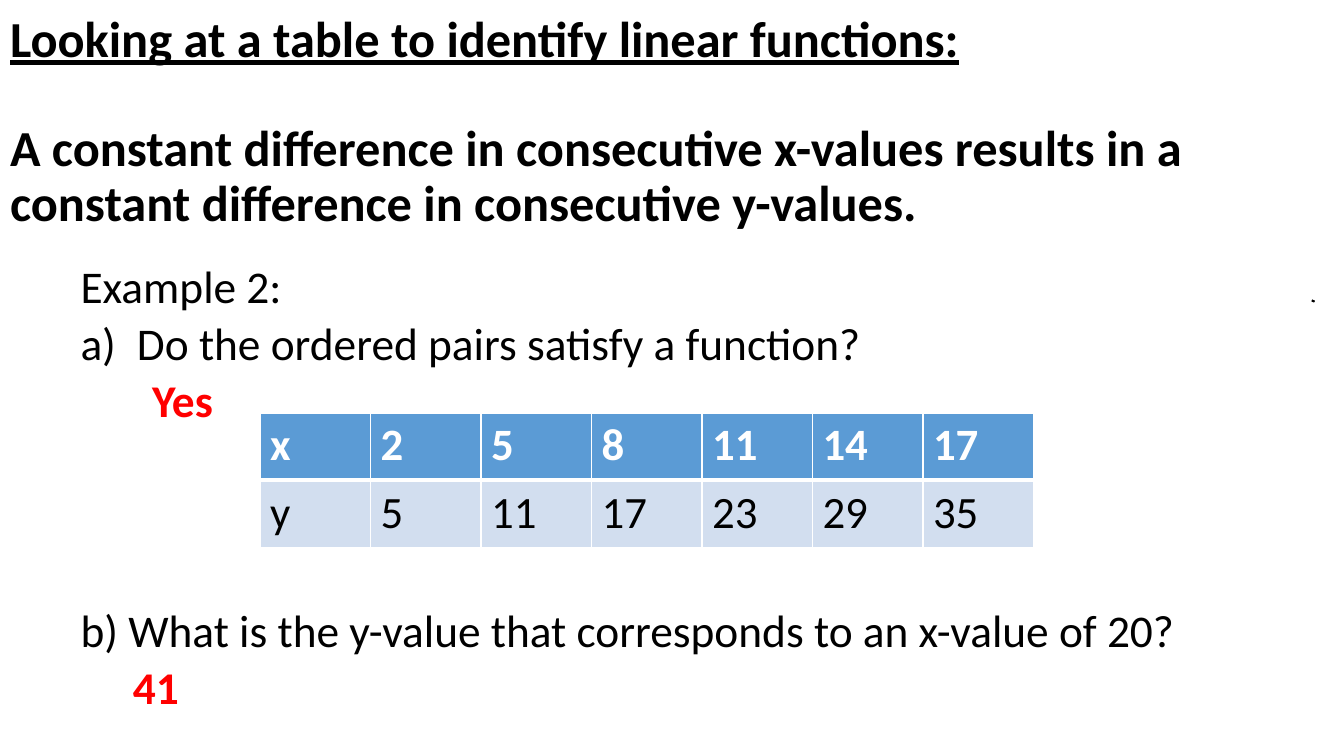
from lxml import etree
from pptx import Presentation
from pptx.dml.color import RGBColor
from pptx.enum.text import MSO_ANCHOR, MSO_AUTO_SIZE
from pptx.oxml.ns import qn
from pptx.util import Inches, Pt

MIDDLE = MSO_ANCHOR.MIDDLE
TOP = MSO_ANCHOR.TOP
NO_FIT = MSO_AUTO_SIZE.NONE
TITLE_ONLY = 5
FONT = "Calibri"
COLORS = {"ink": "000000", "answer": "FF0000", "white": "FFFFFF",
          "head": "5B9BD5", "band": "D2DEEF"}
HEADING = [
    ("Looking at a table to identify linear functions:", True, 0),
    ("A constant difference in consecutive x-values results in a constant "
     "difference in consecutive y-values.", False, 39.5),
]
STEPS = [
    ("Example 2:", "ink", 0, 9.5),
    ("Do the ordered pairs satisfy a function?", "ink", 0.56, 9.5),
    ("Yes", "answer", 0.71, 9.5),
    ("b) What is the y-value that corresponds to an x-value of 20?", "ink", 0, 133),
    ("41", "answer", 0.52, 9.5),
]
PAIRS = [("x", 2, 5, 8, 11, 14, 17), ("y", 5, 11, 17, 23, 29, 35)]


def color(name):
    """Return the named colour."""
    return RGBColor.from_string(COLORS[name])


def add_run(para, text, size, tone="ink", bold=False, line=False):
    """Add one styled run to a paragraph."""
    run = para.add_run()
    run.text = text
    font = run.font
    font.name, font.size, font.bold = FONT, Pt(size), bold
    font.underline = line
    font.color.rgb = color(tone)


def next_para(frame, index):
    """Return the first paragraph of a frame or add another."""
    return frame.add_paragraph() if index else frame.paragraphs[0]


def set_frame(frame, anchor):
    """Make a frame wrap at a fixed size."""
    frame.word_wrap = True
    frame.auto_size = NO_FIT
    frame.vertical_anchor = anchor


def add_title(slide, left, top, width, height):
    """Fill the title placeholder with the rule."""
    title = slide.shapes.title
    title.left, title.top = Inches(left), Inches(top)
    title.width, title.height = Inches(width), Inches(height)
    frame = title.text_frame
    set_frame(frame, MIDDLE)
    for i, (text, line, gap) in enumerate(HEADING):
        para = next_para(frame, i)
        para.alignment = 1
        para.line_spacing = 0.9
        para.space_before = Pt(gap)
        add_run(para, text, 36, bold=True, line=line)


def add_steps(slide, left, top, width, height):
    """Write the questions and their answers."""
    box = slide.shapes.add_textbox(*map(Inches, (left, top, width, height)))
    frame = box.text_frame
    set_frame(frame, TOP)
    for i, (text, tone, indent, gap) in enumerate(STEPS):
        para = next_para(frame, i)
        para.line_spacing = 0.8
        para.space_before = Pt(gap)
        props = para._p.get_or_add_pPr()
        props.set("marL", str(Inches(indent)))
        if indent and tone == "ink":
            props.set("indent", str(-Inches(indent)))
            mark = etree.SubElement(props, qn("a:buAutoNum"))
            mark.set("type", "alphaLcParenR")
        add_run(para, text, 32.4, tone, bold=tone == "answer")


def add_edges(cell, widths):
    """Draw white cell borders, widths in points by side."""
    props = cell._tc.get_or_add_tcPr()
    for side, width in zip("LRTB", widths):
        edge = etree.SubElement(props, qn(f"a:ln{side}"), w=str(Pt(width)))
        fill = etree.SubElement(edge, qn("a:solidFill"))
        etree.SubElement(fill, qn("a:srgbClr"), val=COLORS["white"])


def add_pairs(slide, left, top, width, height):
    """Build the table of x and y values."""
    count = len(PAIRS[0])
    frame = slide.shapes.add_table(
        len(PAIRS), count, *map(Inches, (left, top, width, height)))
    table = frame.table
    for col in table.columns:
        col.width = Inches(width / count)
    for r, values in enumerate(PAIRS):
        head = r == 0
        table.rows[r].height = Inches(height / len(PAIRS))
        for c, value in enumerate(values):
            cell = table.cell(r, c)
            add_edges(cell, (1, 1, 1, 3) if head else (1, 1, 3, 1))
            cell.fill.solid()
            cell.fill.fore_color.rgb = color("head" if head else "band")
            add_run(cell.text_frame.paragraphs[0], str(value), 32,
                    "white" if head else "ink", head)


def add_speck(slide, left, top, width, height):
    """Draw the small ink stroke at the right edge."""
    x, y = Inches(left), Inches(top)
    right, low = Inches(left + width), Inches(top + height)
    pen = slide.shapes.build_freeform(x, y)
    pen.add_line_segments([(right, low), (right, y)], close=False)
    speck = pen.convert_to_shape()
    speck.shadow.inherit = False
    speck.fill.background()
    speck.line.color.rgb = color("ink")
    speck.line.width = Pt(1.5)


def main():
    """Build and save the slide."""
    deck = Presentation()
    deck.slide_width, deck.slide_height = Inches(13.33), Inches(7.5)
    slide = deck.slides.add_slide(deck.slide_layouts[TITLE_ONLY])
    add_title(slide, 0, 0.24, 13.33, 1.96)
    add_steps(slide, 0.7, 2.62, 11.49, 4.81)
    add_pairs(slide, 2.58, 4.1, 7.67, 1.33)
    add_speck(slide, 13.01, 2.98, 0.02, 0.01)
    deck.save("out.pptx")


if __name__ == "__main__":
    main()
